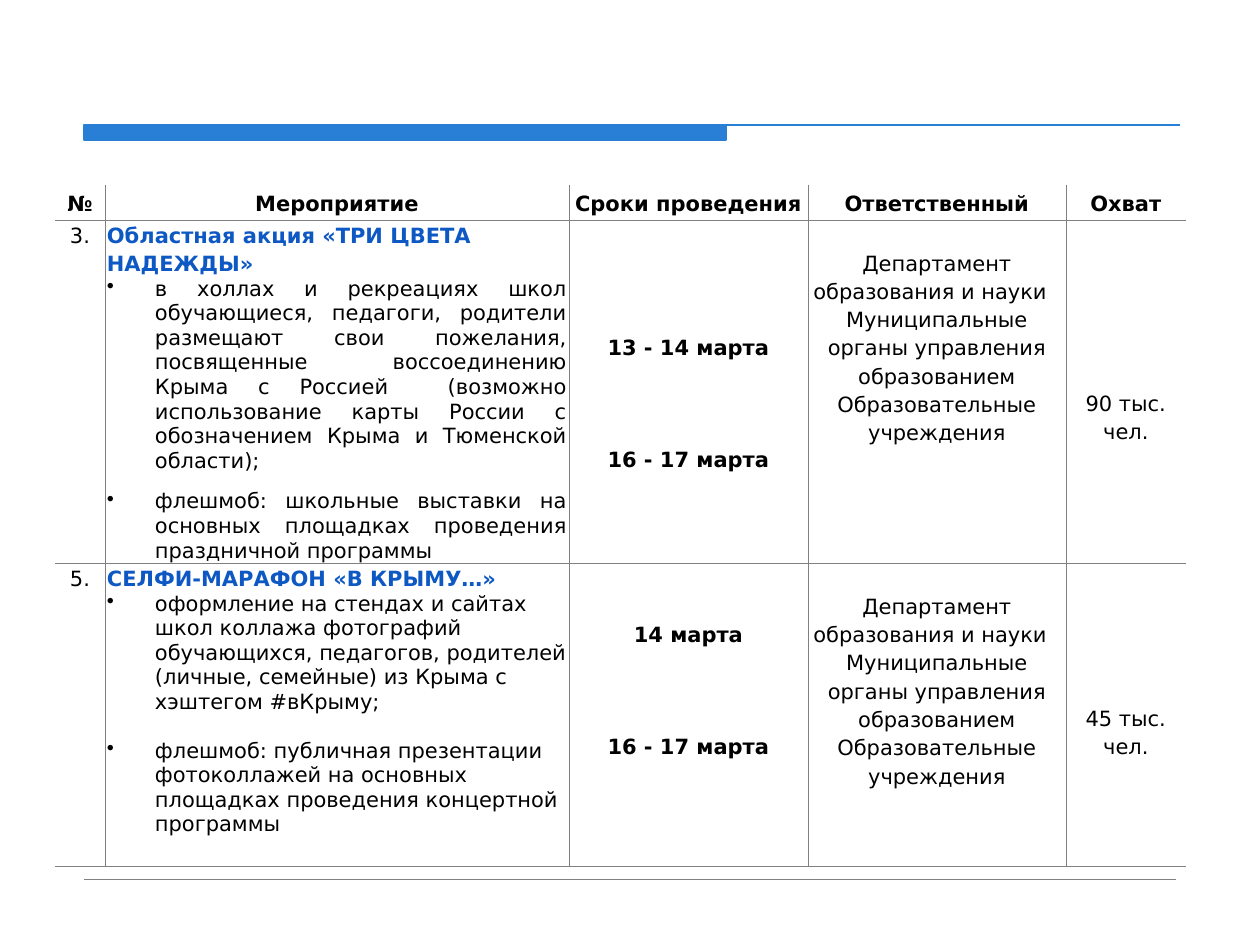
from typing import NamedTuple

from lxml.etree import SubElement
from pptx import Presentation
from pptx.dml.color import RGBColor
from pptx.enum.shapes import MSO_CONNECTOR
from pptx.enum.text import MSO_ANCHOR, PP_ALIGN
from pptx.oxml.ns import qn
from pptx.util import Pt

PX = 914400 // 126
FONT = "DejaVu Sans"
BLACK = RGBColor(0x00, 0x00, 0x00)
BLUE = RGBColor(0x29, 0x7F, 0xD5)
HEADING_BLUE = RGBColor(0x0E, 0x58, 0xC4)
GRAY = RGBColor(0x80, 0x80, 0x80)
COLUMN_WIDTHS = [50, 464, 239, 258, 120]
ROW_HEIGHTS = [35, 343, 303]
TEXT_LINE = 28
BULLET_INDENT = 48


class Note(NamedTuple):
    text: str
    bold: bool = False
    color: RGBColor = BLACK
    align: PP_ALIGN = PP_ALIGN.CENTER
    bullet: bool = False
    gap: int = 0


class Entry(NamedTuple):
    notes: list
    lead: int = 0


def heading(text):
    return Note(text, True, HEADING_BLUE, PP_ALIGN.LEFT)


def bullet(text, align, gap=0):
    return Note(text, align=align, bullet=True, gap=gap)


def dates(first, second, lead):
    return Entry([Note(first, True), Note(second, True, gap=3 * TEXT_LINE)], lead)


HEADERS = [
    Entry([Note(title, True)])
    for title in ("№", "Мероприятие", "Сроки проведения", "Ответственный", "Охват")
]
RESPONSIBLE = Entry([
    Note("Департамент образования и науки  "),
    Note("Муниципальные органы управления образованием"),
    Note("Образовательные учреждения"),
], 1)
EVENTS = [
    [
        Entry([Note("3.")]),
        Entry([
            heading("Областная акция «ТРИ ЦВЕТА НАДЕЖДЫ»"),
            bullet("в холлах и рекреациях школ обучающиеся, педагоги, родители "
                   "размещают свои пожелания, посвященные воссоединению Крыма с "
                   "Россией  (возможно использование карты России с обозначением "
                   "Крыма и Тюменской области);", PP_ALIGN.JUSTIFY),
            bullet("флешмоб: школьные выставки на основных площадках проведения "
                   "праздничной программы", PP_ALIGN.JUSTIFY, 16),
        ]),
        dates("13 - 14 марта", "16 - 17 марта", 4),
        RESPONSIBLE,
        Entry([Note("90 тыс. чел.")], 6),
    ],
    [
        Entry([Note("5.")]),
        Entry([
            heading("СЕЛФИ-МАРАФОН «В КРЫМУ…»"),
            bullet("оформление на стендах и сайтах школ коллажа фотографий "
                   "обучающихся, педагогов, родителей (личные, семейные) из "
                   "Крыма с хэштегом #вКрыму;", PP_ALIGN.LEFT),
            bullet("флешмоб: публичная презентации фотоколлажей на основных "
                   "площадках проведения концертной программы", PP_ALIGN.LEFT, 24),
        ]),
        dates("14 марта", "16 - 17 марта", 2),
        RESPONSIBLE,
        Entry([Note("45 тыс. чел.")], 5),
    ],
]


def add_title_rule(slide, left, top, width, height):
    bar_width = 642
    builder = slide.shapes.build_freeform(left, top, scale=PX)
    builder.add_line_segments(
        [(left + bar_width, top), (left + bar_width, top + height), (left, top + height)],
        close=True,
    )
    builder.move_to(left, top)
    builder.add_line_segments([(left + width, top)], close=False)
    rule = builder.convert_to_shape()
    rule.shadow.inherit = False
    rule.fill.solid()
    rule.fill.fore_color.rgb = BLUE
    rule.line.color.rgb = BLUE
    rule.line.width = Pt(0.75)


def add_footer_rule(slide, left, top, width):
    rule = slide.shapes.add_connector(
        MSO_CONNECTOR.STRAIGHT, left * PX, top * PX, (left + width) * PX, top * PX
    )
    rule.line.color.rgb = GRAY
    rule.line.width = Pt(0.25)
    SubElement(rule.element.spPr, qn("a:effectLst"))


def set_borders(cell, visible_sides):
    properties = cell._tc.get_or_add_tcPr()
    for side in "LRTB":
        border = SubElement(properties, qn(f"a:ln{side}"), w=str(Pt(0.25)))
        if side in visible_sides:
            fill = SubElement(border, qn("a:solidFill"))
            SubElement(fill, qn("a:srgbClr"), val=str(GRAY))
        else:
            SubElement(border, qn("a:noFill"))


def format_note(paragraph, note):
    paragraph.alignment = note.align
    paragraph.line_spacing = 1.0 if note.bullet else 1.15
    paragraph.space_before = note.gap * PX
    if note.bullet:
        properties = paragraph._p.get_or_add_pPr()
        properties.set("marL", str(BULLET_INDENT * PX))
        properties.set("indent", str(-BULLET_INDENT * PX))
        SubElement(properties, qn("a:buChar"), char="•")
    for run in paragraph.runs:
        run.font.name = FONT
        run.font.size = Pt(12)
        run.font.bold = note.bold
        run.font.color.rgb = note.color


def fill_cell(cell, entry):
    cell.margin_left = cell.margin_right = 2 * PX
    cell.margin_top = entry.lead * TEXT_LINE * PX
    cell.margin_bottom = 0
    cell.text_frame.text = "\n".join(note.text for note in entry.notes)
    for paragraph, note in zip(cell.text_frame.paragraphs, entry.notes):
        format_note(paragraph, note)


def add_schedule(slide, left, top):
    rows = [HEADERS] + EVENTS
    schedule = slide.shapes.add_table(
        len(rows), len(HEADERS), left * PX, top * PX,
        sum(COLUMN_WIDTHS) * PX, sum(ROW_HEIGHTS) * PX,
    ).table
    schedule.first_row = False
    schedule.horz_banding = False
    for column, width in zip(schedule.columns, COLUMN_WIDTHS):
        column.width = width * PX
    for row, height in zip(schedule.rows, ROW_HEIGHTS):
        row.height = height * PX
    for row_index, entries in enumerate(rows):
        for column_index, entry in enumerate(entries):
            cell = schedule.cell(row_index, column_index)
            fill_cell(cell, entry)
            sides = "B"
            if row_index > 0:
                sides += "T"
            else:
                cell.vertical_anchor = MSO_ANCHOR.MIDDLE
            if column_index > 0:
                sides += "L"
            if column_index < len(entries) - 1:
                sides += "R"
            set_borders(cell, sides)
            cell.fill.background()


def main():
    presentation = Presentation()
    presentation.slide_width = 1260 * PX
    presentation.slide_height = 945 * PX
    slide = presentation.slides.add_slide(presentation.slide_layouts[6])
    add_title_rule(slide, 84, 125, 1096, 15)
    add_footer_rule(slide, 84, 879, 1092)
    add_schedule(slide, 55, 185)
    presentation.save("out.pptx")


if __name__ == "__main__":
    main()
